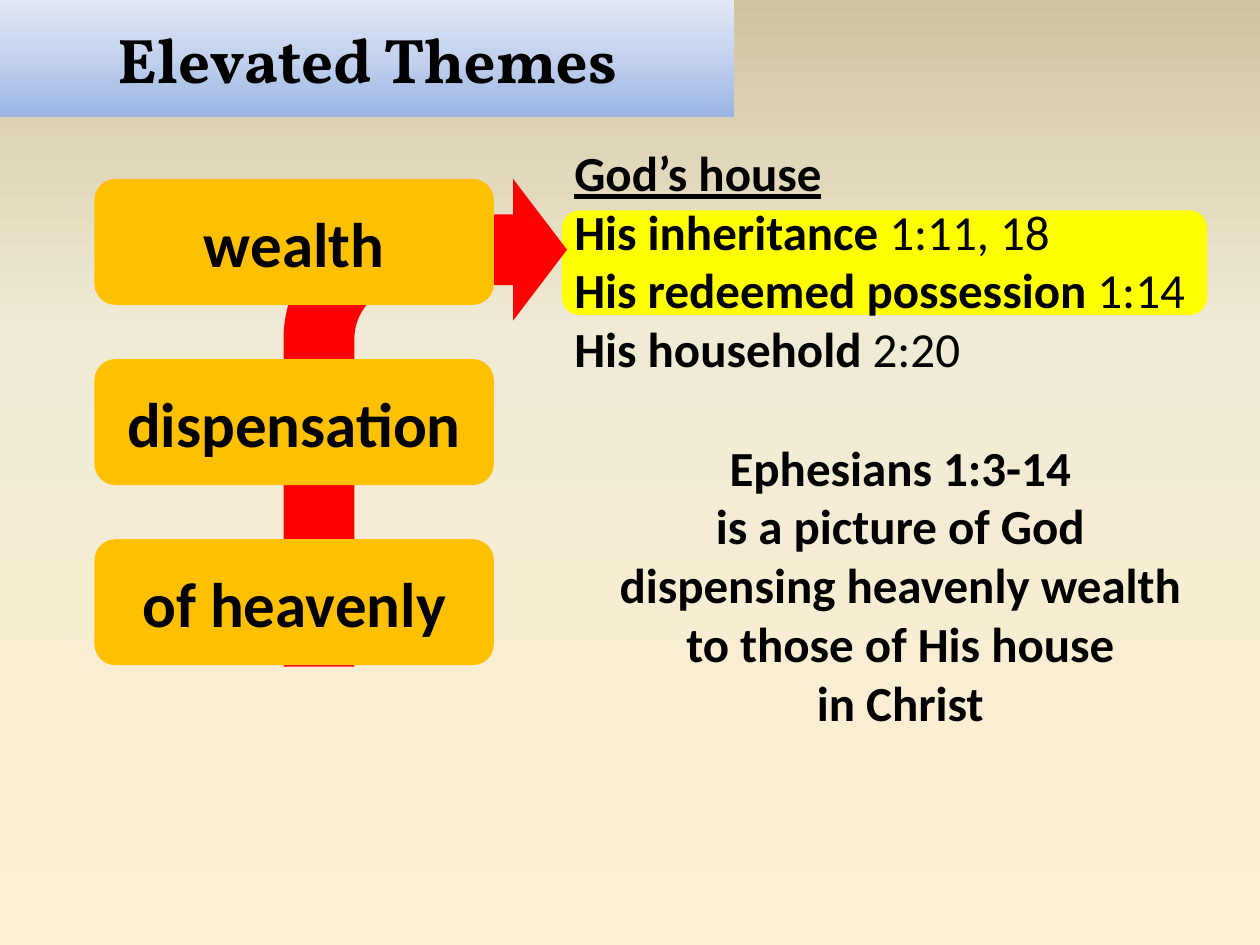
from copy import deepcopy

from pptx import Presentation
from pptx.dml.color import RGBColor
from pptx.enum.shapes import MSO_SHAPE
from pptx.enum.text import MSO_ANCHOR, PP_ALIGN
from pptx.util import Inches, Pt

RECTANGLE = MSO_SHAPE.RECTANGLE
ROUNDED = MSO_SHAPE.ROUNDED_RECTANGLE
BENT_ARROW = MSO_SHAPE.BENT_ARROW
MIDDLE = MSO_ANCHOR.MIDDLE
LEFT, CENTER = PP_ALIGN.LEFT, PP_ALIGN.CENTER

WIDTH, HEIGHT = 10, 7.5
THEME_LEFT, THEME_TOP, THEME_PITCH = 0.75, 1.42, 1.43
THEME_WIDTH, THEME_HEIGHT = 3.17, 1
HOUSE_LEFT = 4.46

BACKDROP = [(0, "FFEFD1"), (0.65, "F0EBD5"), (1, "D1C39F")]
TITLE_BLUES = [(0, "9AB5E4"), (0.5, "C2D1ED"), (1, "E1E8F5")]

BODY = {"name": "Calibri", "size": Pt(28), "bold": True}
REFERENCE = {**BODY, "bold": False}
HEADING = {**BODY, "underline": True}
THEME = {**BODY, "size": Pt(36)}
TITLE = {**THEME, "name": "Vollkorn"}

THEMES = ["wealth", "dispensation", "of heavenly"]
HOUSE = [
    [("God’s house", HEADING)],
    [("His inheritance ", BODY), ("1:11, 18", REFERENCE)],
    [("His redeemed possession", BODY), (" 1:14", REFERENCE)],
    [("His household", BODY), (" 2:20", REFERENCE)],
]
SUMMARY = [
    "Ephesians 1:3-14",
    "is a picture of God",
    "dispensing heavenly wealth",
    "to those of His house",
    "in Christ",
]


def color(hex_string):
    """Turn a hex string into a colour."""
    return RGBColor.from_string(hex_string)


def paint(fill, paint_value):
    """Fill with one hex colour, or with three stops rising from the bottom."""
    if isinstance(paint_value, str):
        fill.solid()
        fill.fore_color.rgb = color(paint_value)
        return
    fill.gradient()
    fill.gradient_angle = 90
    first_stop = fill.gradient_stops[0]._gs
    first_stop.addnext(deepcopy(first_stop))
    for stop, (position, hex_string) in zip(fill.gradient_stops, paint_value):
        stop.position = position
        stop.color.rgb = color(hex_string)


def write_line(paragraph, pieces, alignment):
    """Write formatted pieces of text into one paragraph."""
    paragraph.alignment = alignment
    for words, style in pieces:
        run = paragraph.add_run()
        run.text = words
        run.font.color.rgb = color("000000")
        for attribute, value in style.items():
            setattr(run.font, attribute, value)


def add_panel(slide, preset, box, paint_value, label="", style=BODY):
    """Add a flat shape with an optional centred label."""
    panel = slide.shapes.add_shape(preset, *map(Inches, box))
    panel.shadow.inherit = False
    panel.line.fill.background()
    paint(panel.fill, paint_value)
    if label:
        panel.text_frame.vertical_anchor = MIDDLE
        write_line(panel.text_frame.paragraphs[0], [(label, style)], CENTER)
    return panel


def add_house_text(slide, box):
    """Add the references to God's house and the summary below them."""
    frame = slide.shapes.add_textbox(*map(Inches, box)).text_frame
    frame.word_wrap = True
    lines = [(pieces, LEFT) for pieces in HOUSE]
    lines += [([(words, BODY)], CENTER) for words in SUMMARY]
    for index, (pieces, alignment) in enumerate(lines):
        paragraph = frame.add_paragraph() if index else frame.paragraphs[0]
        write_line(paragraph, pieces, alignment)
        if index == len(HOUSE):
            paragraph.space_before = Pt(34)


def main():
    """Build and save the slide."""
    deck = Presentation()
    deck.slide_width, deck.slide_height = Inches(WIDTH), Inches(HEIGHT)
    slide = deck.slides.add_slide(deck.slide_layouts[6])
    paint(slide.background.fill, BACKDROP)

    add_panel(slide, ROUNDED, (HOUSE_LEFT, 1.67, 5.12, 0.83), "FFFF00")
    add_house_text(slide, (HOUSE_LEFT, 1.08, 5.37, 4.81))

    arrow = add_panel(slide, BENT_ARROW, (2.25, THEME_TOP, 2.25, 3.87), "FF0000")
    for index, share in enumerate((0.25, 0.25, 0.19, 0.44)):
        arrow.adjustments[index] = share

    title_box = (0, 0, WIDTH * 0.583, HEIGHT * 0.124)
    add_panel(slide, RECTANGLE, title_box, TITLE_BLUES, "Elevated Themes", TITLE)
    for row, theme in enumerate(THEMES):
        top = THEME_TOP + row * THEME_PITCH
        theme_box = (THEME_LEFT, top, THEME_WIDTH, THEME_HEIGHT)
        add_panel(slide, ROUNDED, theme_box, "FFC000", theme, THEME)

    deck.save("out.pptx")


if __name__ == "__main__":
    main()
